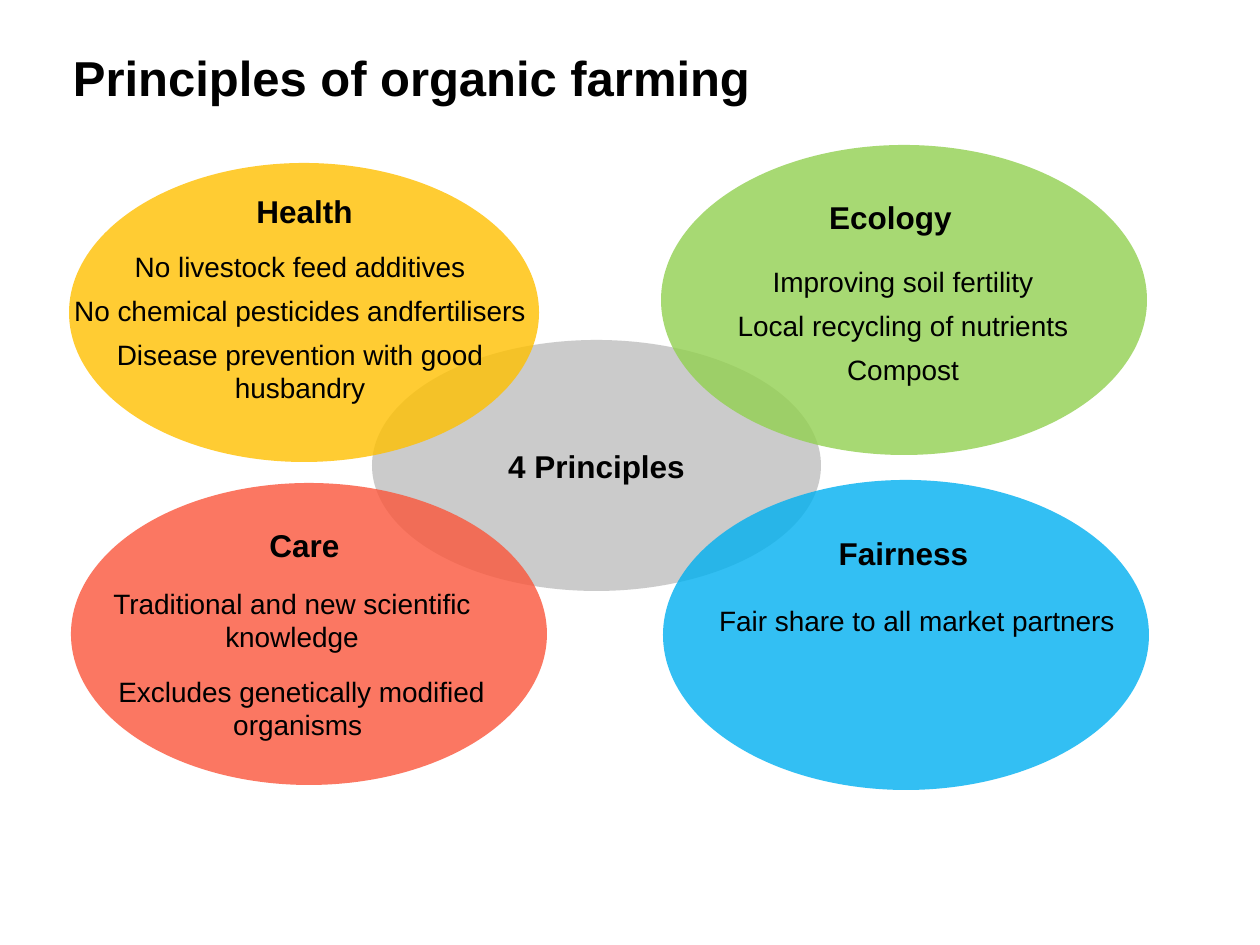
from lxml.etree import SubElement
from pptx import Presentation
from pptx.dml.color import RGBColor
from pptx.enum.shapes import MSO_SHAPE
from pptx.enum.text import MSO_ANCHOR, PP_ALIGN
from pptx.oxml.ns import qn
from pptx.util import Emu, Pt

BLACK = RGBColor(0x00, 0x00, 0x00)
GREY = RGBColor(0xBF, 0xBF, 0xBF)
BLUE = RGBColor(0x00, 0xB0, 0xF0)
RED = RGBColor(0xFB, 0x56, 0x3B)
AMBER = RGBColor(0xFF, 0xC0, 0x00)
GREEN = RGBColor(0x92, 0xD0, 0x50)

FONT = "Arial"
OPACITY = 80
PX_PER_INCH = 126
HEADING_SIZE = (229, 50)

TITLE = ("Principles of organic farming", (73, 32, 1137, 96))
CENTRE = ("4 Principles", GREY, (372, 340, 449, 251))

# Boxes are left, top, width, height in px; headings are left, top.
PRINCIPLES = [
    {"name": "Fairness", "colour": BLUE, "ellipse": (663, 480, 486, 310),
     "heading": (789, 528),
     "notes": [((638, 597, 558, 62), ["Fair share to all market partners"])]},
    {"name": "Care", "colour": RED, "ellipse": (71, 483, 476, 302),
     "heading": (190, 520),
     "notes": [((93, 580, 398, 108), ["Traditional and new scientific knowledge"]),
               ((98, 668, 407, 105), ["Excludes genetically modified organisms "])]},
    {"name": "Health", "colour": AMBER, "ellipse": (69, 163, 470, 299),
     "heading": (190, 186),
     "notes": [((45, 243, 510, 296), ["No livestock feed additives",
                                      "No chemical pesticides andfertilisers",
                                      "Disease prevention with good husbandry"])]},
    {"name": "Ecology", "colour": GREEN, "ellipse": (661, 145, 486, 310),
     "heading": (776, 192),
     "notes": [((660, 258, 486, 170), ["Improving soil fertility",
                                       "Local recycling of nutrients",
                                       "Compost"])]},
]


def px(length):
    return Emu(round(length * 914400 / PX_PER_INCH))


def write(frame, lines, size, bold=False, align=PP_ALIGN.CENTER):
    frame.word_wrap = True
    for index, line in enumerate(lines):
        paragraph = frame.paragraphs[0] if index == 0 else frame.add_paragraph()
        paragraph.alignment = align
        if index:
            paragraph.space_before = Pt(6)
        span = paragraph.add_run()
        span.text = line
        span.font.name = FONT
        span.font.size = Pt(size)
        span.font.bold = bold
        span.font.color.rgb = BLACK


def add_text(page, place, lines, size, **style):
    box = page.shapes.add_textbox(*map(px, place))
    write(box.text_frame, lines, size, **style)
    return box


def add_ellipse(page, place, colour):
    ellipse = page.shapes.add_shape(MSO_SHAPE.OVAL, *map(px, place))
    ellipse.shadow.inherit = False
    ellipse.line.fill.background()
    ellipse.fill.solid()
    ellipse.fill.fore_color.rgb = colour
    fill_colour = ellipse.fill._xPr.find(qn("a:solidFill"))[0]
    SubElement(fill_colour, qn("a:alpha"), val=str(OPACITY * 1000))
    return ellipse


def main():
    deck = Presentation()
    deck.slide_width, deck.slide_height = px(1260), px(945)
    page = deck.slides.add_slide(deck.slide_layouts[6])

    text, place = TITLE
    title = add_text(page, place, [text], 28, bold=True, align=PP_ALIGN.LEFT)
    title.text_frame.vertical_anchor = MSO_ANCHOR.MIDDLE
    title.text_frame.margin_left = title.text_frame.margin_top = 0

    text, colour, place = CENTRE
    centre = add_ellipse(page, place, colour)
    centre.text_frame.vertical_anchor = MSO_ANCHOR.MIDDLE
    write(centre.text_frame, [text], 18, bold=True)

    for principle in PRINCIPLES:
        add_ellipse(page, principle["ellipse"], principle["colour"])
    for principle in PRINCIPLES:
        add_text(page, principle["heading"] + HEADING_SIZE, [principle["name"]],
                 18, bold=True)
        for place, lines in principle["notes"]:
            add_text(page, place, lines, 16)

    deck.save("out.pptx")


if __name__ == "__main__":
    main()
